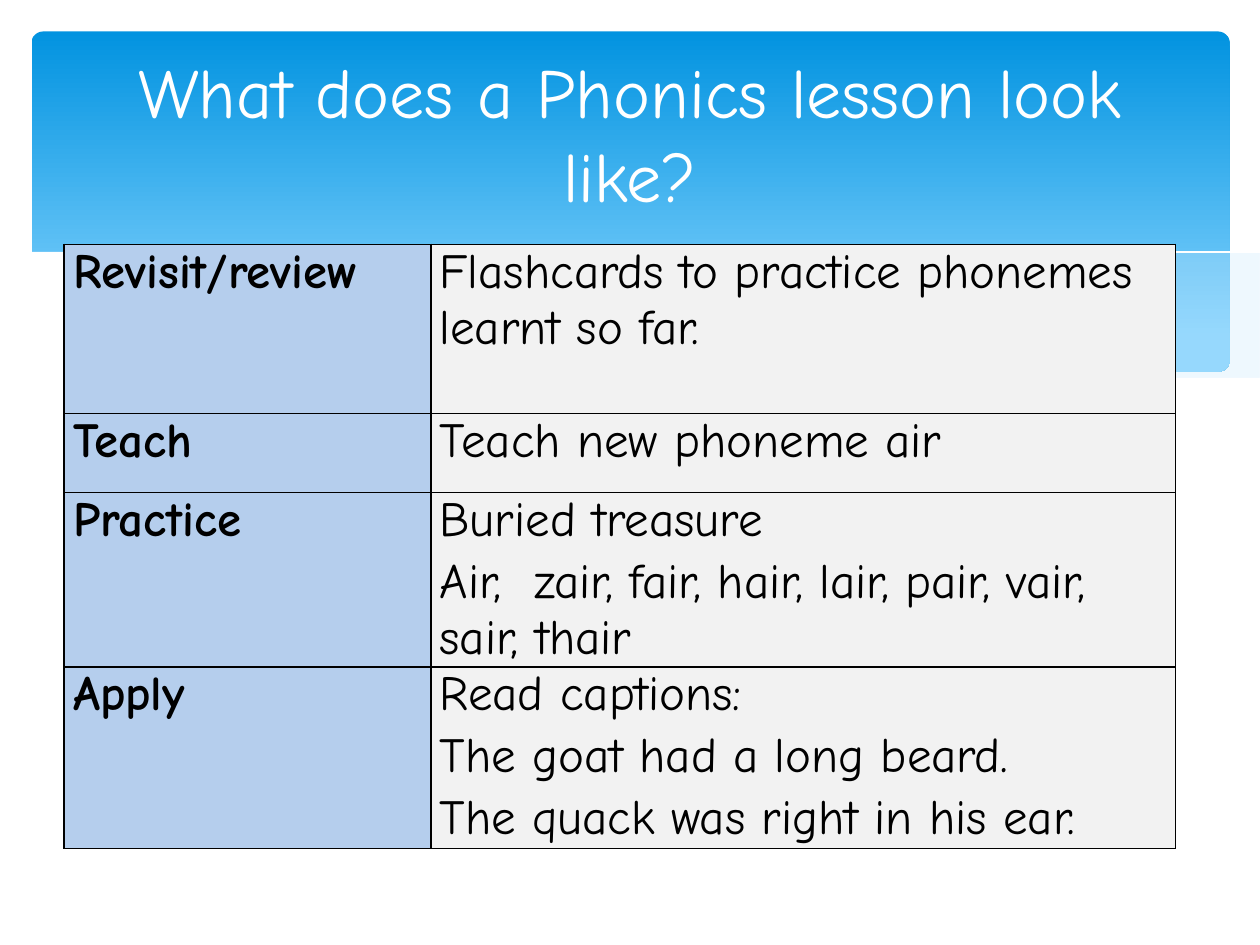
from lxml import etree
from pptx import Presentation
from pptx.dml.color import RGBColor
from pptx.enum.shapes import MSO_SHAPE
from pptx.enum.text import MSO_ANCHOR, PP_ALIGN
from pptx.oxml.ns import qn
from pptx.util import Inches, Pt

FONT = "Comic Neue"
COLORS = {
    "deep": "0293E0", "sky": "83D3FE", "mist": "C6E7FC", "white": "FFFFFF",
    "black": "000000", "label": "B5CEED", "cell": "F2F2F2",
}

# Each wave is a list of edges; an edge is a smooth curve through its points
RIGHT = [
    [(9.76, 2), (9.35, 2.07), (8.61, 2.23), (7.79, 2.42), (7.06, 2.57), (6.61, 2.65)],
    [(6.61, 2.65), (7.05, 2.71), (7.57, 2.76), (8.03, 2.78), (8.54, 2.76),
     (8.97, 2.7), (9.35, 2.62), (9.76, 2.47)],
]
MIDDLE = [
    [(8.93, 2.73), (8.37, 2.65), (7.41, 2.47), (6.29, 2.22), (5.55, 2.05), (4.89, 1.94),
     (4.2, 1.87), (3.61, 1.85), (3.13, 1.88), (2.86, 1.91)],
    [(2.86, 1.91), (3.42, 1.99), (4.04, 2.11), (4.91, 2.32), (5.84, 2.52), (6.65, 2.66),
     (7.36, 2.75), (7.96, 2.78), (8.48, 2.77), (8.93, 2.73)],
]
CREST = [[(3.09, 1.95), (3.53, 1.89), (4.16, 1.87), (4.89, 1.9), (5.56, 1.97),
          (6.36, 2.08), (7.27, 2.26), (8.31, 2.51), (9.07, 2.72)]]
RISE = [[(6.13, 2.57), (6.72, 2.41), (7.48, 2.23), (8.36, 2.04), (8.95, 1.94),
         (9.38, 1.88), (9.75, 1.85)]]
FRONT = [
    [(9.77, 2.46), (9.4, 2.59), (8.99, 2.69), (8.5, 2.75), (8.09, 2.77), (7.44, 2.74),
     (6.68, 2.65), (5.79, 2.5), (5.03, 2.33), (4.18, 2.13), (3.4, 1.97), (2.71, 1.88),
     (2.11, 1.84), (1.61, 1.84), (1.19, 1.87), (0.76, 1.95), (0.46, 2.03), (0.23, 2.13)],
    [(0.23, 3.29), (9.77, 3.29)],
]

ROWS = [
    ("Revisit/review", ["Flashcards to practice phonemes learnt so far."], 1.34),
    ("Teach", ["Teach new phoneme air"], 0.63),
    ("Practice", ["Buried treasure",
                  "Air,  zair, fair, hair, lair, pair, vair, sair, thair"], 1.38),
    ("Apply", ["Read captions:", "The goat had a long beard.",
               "The quack was right in his ear."], 1.44),
]


def color(name):
    return RGBColor.from_string(COLORS[name])


def smooth(points, steps=5):
    """Catmull-Rom curve through the points."""
    ends = [points[0], *points, points[-1]]
    curve = [points[0]]
    for a, b, c, d in zip(ends, ends[1:], ends[2:], ends[3:]):
        for step in range(1, steps + 1):
            t = step / steps
            curve.append(tuple(
                (2 * q + (r - p) * t + (2 * p - 5 * q + 4 * r - s) * t ** 2
                 + (3 * q - p - 3 * r + s) * t ** 3) / 2
                for p, q, r, s in zip(a, b, c, d)))
    return curve


def add_wave(slide, edges, fill=None, alpha=100):
    points = [point for edge in edges for point in smooth(edge)]
    pen = slide.shapes.build_freeform(*points[0], scale=Inches(1))
    pen.add_line_segments(points[1:], close=fill is not None)
    wave = pen.convert_to_shape()
    wave.shadow.inherit = False
    if fill is None:
        wave.fill.background()
        wave.line.color.rgb = color("white")
        wave.line.width = Pt(0)
        return
    wave.fill.solid()
    wave.fill.fore_color.rgb = color(fill)
    wave.line.fill.background()
    if alpha < 100:
        tint = wave._element.spPr.find(qn("a:solidFill"))[0]
        etree.SubElement(tint, qn("a:alpha"), val=str(alpha * 1000))


def add_banner(slide, left, top, width, height):
    panel = slide.shapes.add_shape(MSO_SHAPE.ROUNDED_RECTANGLE, left, top, width, height)
    panel.adjustments[0] = 0.034
    panel.shadow.inherit = False
    panel.line.fill.background()
    panel.fill.gradient()
    panel.fill.gradient_angle = 270
    for stop, name, place in zip(panel.fill.gradient_stops, ("deep", "sky"), (0, 0.9)):
        stop.color.rgb = color(name)
        stop.position = place
    add_wave(slide, RIGHT, "mist", 29)
    add_wave(slide, MIDDLE, "mist", 40)
    add_wave(slide, CREST)
    add_wave(slide, RISE)
    add_wave(slide, FRONT, "white")


def style(part, size, name, bold=False):
    for run in part.runs:
        run.font.name = FONT
        run.font.size = Pt(size)
        run.font.bold = bold
        run.font.color.rgb = color(name)


def set_title(slide, left, top, width, height):
    title = slide.shapes.title
    title.left, title.top, title.width, title.height = left, top, width, height
    frame = title.text_frame
    frame.text = "What does a Phonics lesson look like?"
    frame.word_wrap = True
    frame.vertical_anchor = MSO_ANCHOR.MIDDLE
    frame.paragraphs[0].alignment = PP_ALIGN.CENTER
    style(frame.paragraphs[0], 40, "white")
    # Bring the title in front of the banner
    slide.shapes._spTree.append(title._element)


def add_border(cell):
    props = cell._tc.get_or_add_tcPr()
    for spot, side in enumerate(("lnL", "lnR", "lnT", "lnB")):
        line = etree.Element(qn(f"a:{side}"), w=str(Pt(1)))
        fill = etree.SubElement(line, qn("a:solidFill"))
        etree.SubElement(fill, qn("a:srgbClr"), val=COLORS["black"])
        props.insert(spot, line)


def fill_cell(cell, lines, back, bold):
    cell.fill.solid()
    cell.fill.fore_color.rgb = color(back)
    cell.margin_left = cell.margin_right = Inches(0.07)
    cell.margin_top = cell.margin_bottom = 0
    cell.text_frame.text = "\n".join(lines)
    for part in cell.text_frame.paragraphs:
        part.space_before = Pt(3)
        style(part, 28, "black", bold)
    add_border(cell)


def add_plan(slide, left, top, width, height):
    table = slide.shapes.add_table(len(ROWS), 2, left, top, width, height).table
    table.first_row = table.horz_banding = False
    table.columns[0].width = Inches(2.91)
    table.columns[1].width = width - Inches(2.91)
    for row, (label, lines, tall) in zip(table.rows, ROWS):
        row.height = Inches(tall)
        fill_cell(row.cells[0], [label], "label", True)
        fill_cell(row.cells[1], lines, "cell", False)


def main():
    deck = Presentation()
    deck.slide_width, deck.slide_height = Inches(10), Inches(7.5)
    slide = deck.slides.add_slide(deck.slide_layouts[5])
    add_banner(slide, Inches(0.25), Inches(0.25), Inches(9.51), Inches(2.7))
    set_title(slide, Inches(0.5), Inches(0.37), Inches(9), Inches(1.37))
    add_plan(slide, Inches(0.51), Inches(1.94), Inches(8.82), Inches(4.79))
    deck.save("out.pptx")


if __name__ == "__main__":
    main()
